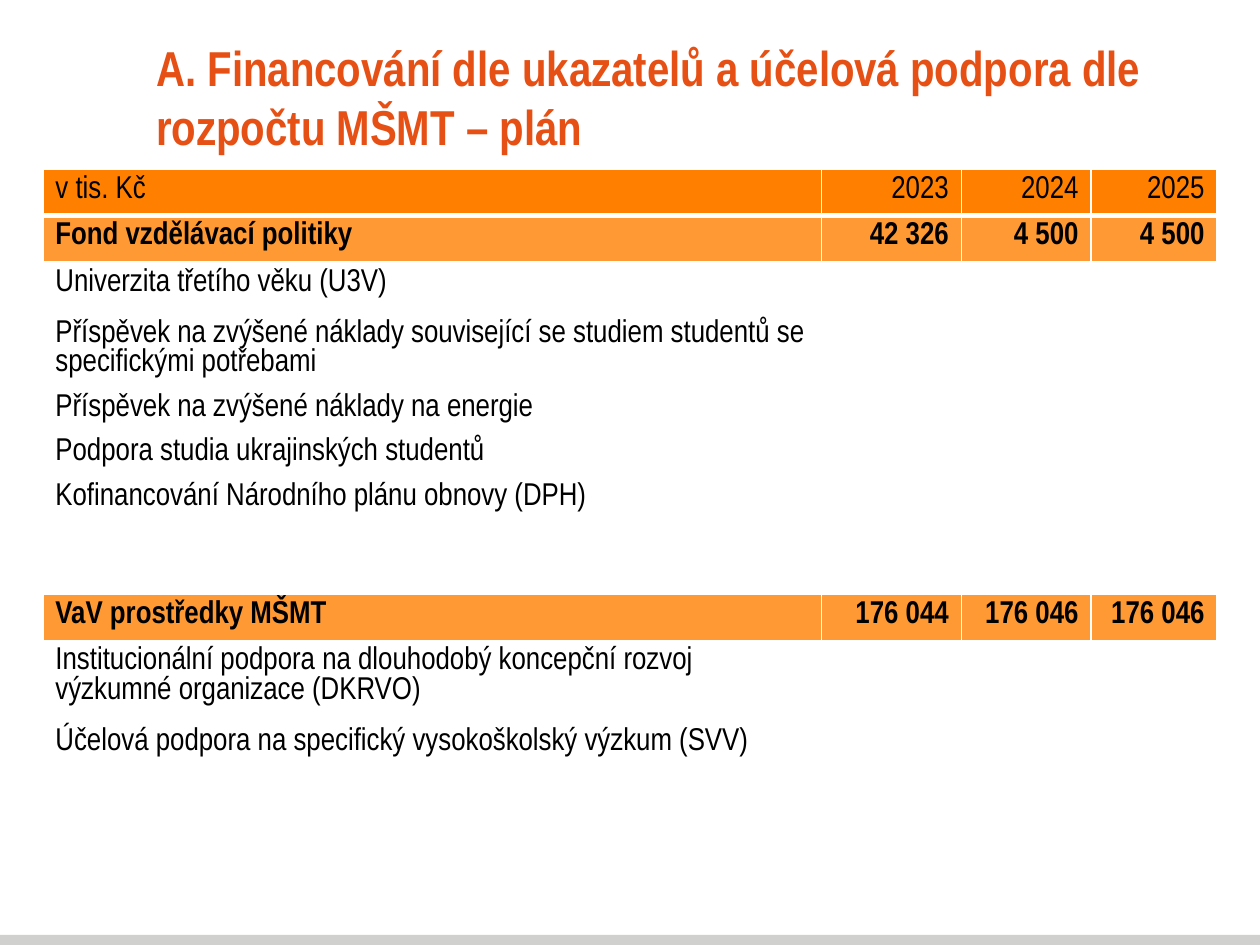
from lxml.etree import SubElement
from pptx import Presentation
from pptx.dml.color import RGBColor
from pptx.enum.shapes import MSO_SHAPE as Shape
from pptx.enum.text import MSO_ANCHOR as Anchor, PP_ALIGN as Align
from pptx.oxml.ns import qn
from pptx.util import Inches, Pt

FONT = "Arial Narrow"
TITLE_ORANGE = RGBColor(0xE6, 0x50, 0x14)
HEADER_ORANGE = RGBColor(0xFF, 0x80, 0x01)
SECTION_ORANGE = RGBColor(0xFF, 0x99, 0x33)
BAR_GRAY = RGBColor(0xD0, 0xD0, 0xCE)
WHITE = RGBColor(0xFF, 0xFF, 0xFF)
BLACK = RGBColor(0, 0, 0)


def add_border(cell, side, width):
    line = SubElement(cell._tc.get_or_add_tcPr(), qn(f"a:ln{side}"), w=str(Pt(width)))
    fill = SubElement(line, qn("a:solidFill"))
    SubElement(fill, qn("a:srgbClr"), val=str(WHITE))


presentation = Presentation()
presentation.slide_width = Inches(10)
presentation.slide_height = Inches(7.5)
slide = presentation.slides.add_slide(presentation.slide_layouts[5])

# Footer bar
bar = slide.shapes.add_shape(Shape.RECTANGLE, 0, Inches(7.42), Inches(10), Inches(0.08))
bar.shadow.inherit = False
bar.fill.solid()
bar.fill.fore_color.rgb = BAR_GRAY
bar.line.fill.background()

# Title
title = slide.shapes.title
title.left, title.top = Inches(1.14), Inches(0.36)
title.width, title.height = Inches(8.11), Inches(0.81)
title.text_frame.vertical_anchor = Anchor.MIDDLE
title.text_frame.text = "A. Financování dle ukazatelů a účelová podpora dle rozpočtu MŠMT – plán"
paragraph = title.text_frame.paragraphs[0]
paragraph.alignment = Align.LEFT
paragraph.font.name = FONT
paragraph.font.size = Pt(28)
paragraph.font.bold = True
paragraph.font.color.rgb = TITLE_ORANGE

# Budget table: row height, fill, bold, cell texts
rows = [
    (0.37, HEADER_ORANGE, False, ["v tis. Kč", "2023", "2024", "2025"]),
    (0.37, SECTION_ORANGE, True, ["Fond vzdělávací politiky", "42 326", "4 500", "4 500"]),
    (0.37, WHITE, False, ["Univerzita třetího věku (U3V)"]),
    (2.23, WHITE, False, [
        "Příspěvek na zvýšené náklady související se studiem studentů se specifickými potřebami\n"
        "Příspěvek na zvýšené náklady na energie\n"
        "Podpora studia ukrajinských studentů\n"
        "Kofinancování Národního plánu obnovy (DPH)"]),
    (0.37, SECTION_ORANGE, True, ["VaV prostředky MŠMT", "176 044", "176 046", "176 046"]),
    (0.64, WHITE, False, [
        "Institucionální podpora na dlouhodobý koncepční rozvoj výzkumné organizace (DKRVO)"]),
    (1.46, WHITE, False, ["Účelová podpora na specifický vysokoškolský výzkum (SVV)"]),
]
column_widths = [6.18, 1.11, 1.03, 1]
table = slide.shapes.add_table(
    len(rows), len(column_widths), Inches(0.34), Inches(1.34),
    Inches(sum(column_widths)), Inches(sum(row[0] for row in rows))).table

for column, width in zip(table.columns, column_widths):
    column.width = Inches(width)

for row_index, (height, fill_color, bold, texts) in enumerate(rows):
    table.rows[row_index].height = Inches(height)
    for column_index in range(len(column_widths)):
        cell = table.cell(row_index, column_index)
        for side in "LRTB":
            below_header = (row_index, side) in [(0, "B"), (1, "T")]
            add_border(cell, side, 3 if below_header else 1)
        cell.fill.solid()
        cell.fill.fore_color.rgb = fill_color
        if column_index >= len(texts):
            continue
        cell.text = texts[column_index]
        for paragraph_index, paragraph in enumerate(cell.text_frame.paragraphs):
            paragraph.alignment = Align.RIGHT if column_index else Align.LEFT
            if paragraph_index:
                paragraph.line_spacing = 1.5
            paragraph.font.name = FONT
            paragraph.font.size = Pt(18)
            paragraph.font.bold = bold
            paragraph.font.color.rgb = BLACK

presentation.save("out.pptx")
